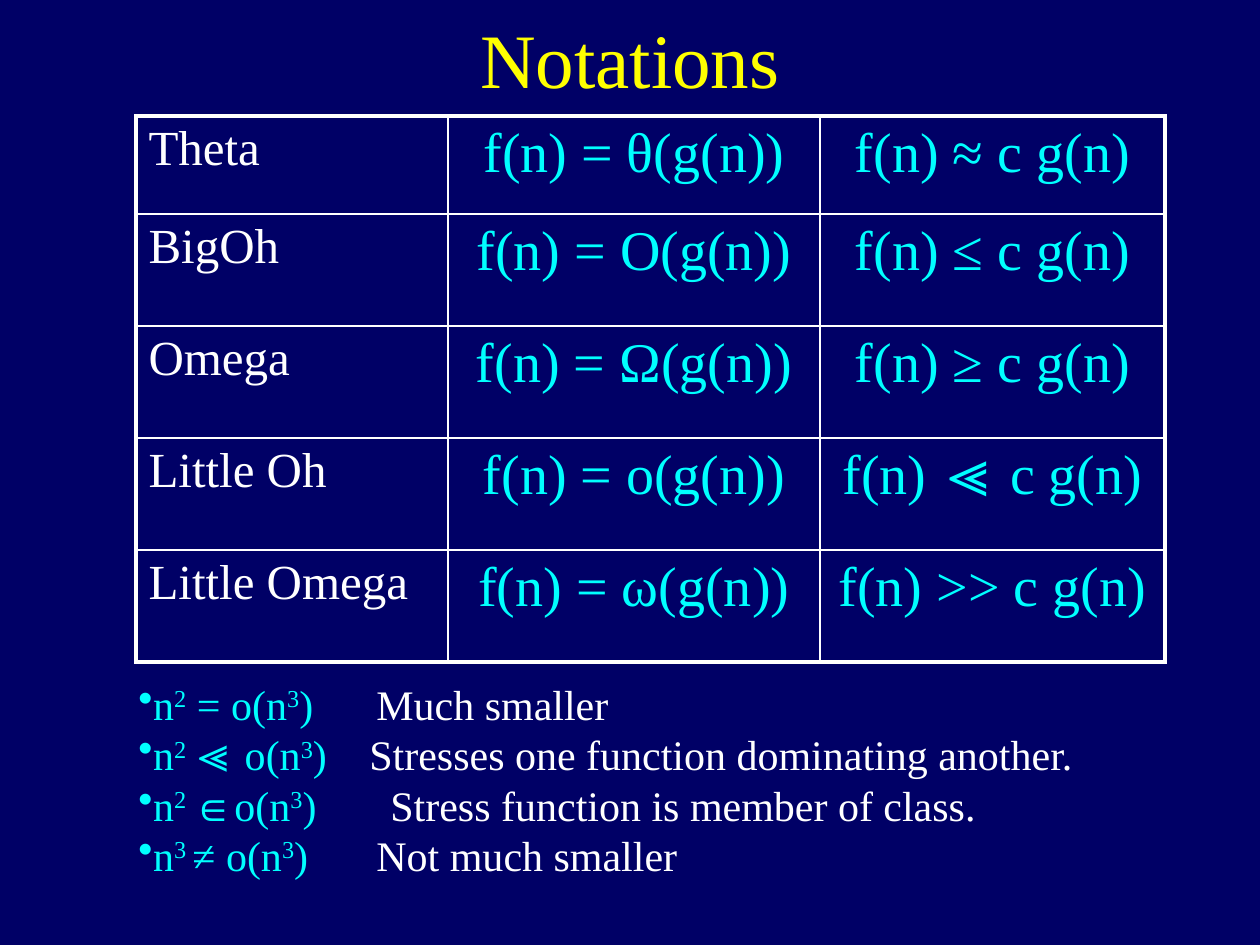
import dataclasses

import lxml.etree
import pptx
import pptx.dml.color
import pptx.enum.text
import pptx.oxml.ns
import pptx.util

PX = 914400 / 126
ALIGN = pptx.enum.text.PP_ALIGN
ANCHOR = pptx.enum.text.MSO_ANCHOR


@dataclasses.dataclass(frozen=True)
class Theme:
    background: str = "000066"
    heading: str = "FFFF00"
    formula: str = "00FFFF"
    body: str = "FFFFFF"
    font: str = "Times New Roman"
    symbol_font: str = "Arial"
    title_size: int = 44
    formula_size: int = 32
    label_size: int = 28
    example_size: int = 24
    outer_line: float = 2.25
    inner_line: float = 1


def px(length):
    return pptx.util.Emu(round(length * PX))


def rgb(value):
    return pptx.dml.color.RGBColor.from_string(value)


def add_xml(parent, tag, **attributes):
    element = lxml.etree.SubElement(parent, pptx.oxml.ns.qn(tag))
    for key, value in attributes.items():
        element.set(key, str(value))
    return element


class SlideBuilder:
    def __init__(self, slide, theme):
        self.slide = slide
        self.theme = theme
        fill = slide.background.fill
        fill.solid()
        fill.fore_color.rgb = rgb(theme.background)

    def run(self, paragraph, text, size, color, font=None, raised=False):
        run = paragraph.add_run()
        run.text = text
        run.font.size = pptx.util.Pt(size)
        run.font.name = font or self.theme.font
        run.font.color.rgb = rgb(color)
        if raised:
            run._r.get_or_add_rPr().set("baseline", "30000")

    def space_before(self, paragraph, percent):
        spacing = add_xml(paragraph._p.get_or_add_pPr(), "a:spcBef")
        add_xml(spacing, "a:spcPct", val=percent * 1000)

    def title(self, text, left, top, width, height):
        heading = self.slide.shapes.title
        heading.left, heading.top = px(left), px(top)
        heading.width, heading.height = px(width), px(height)
        heading.text_frame.vertical_anchor = ANCHOR.MIDDLE
        paragraph = heading.text_frame.paragraphs[0]
        paragraph.alignment = ALIGN.CENTER
        self.run(paragraph, text, self.theme.title_size, self.theme.heading)

    def borders(self, cell, outer_sides):
        properties = cell._tc.get_or_add_tcPr()
        for index, side in enumerate("LRTB"):
            outer = side in outer_sides
            points = self.theme.outer_line if outer else self.theme.inner_line
            line = add_xml(properties, f"a:ln{side}", w=pptx.util.Pt(points))
            add_xml(add_xml(line, "a:solidFill"), "a:srgbClr", val=self.theme.body)
            properties.remove(line)
            properties.insert(index, line)

    def table(self, rows, left, top, widths, heights):
        frame = self.slide.shapes.add_table(
            len(rows), len(widths), px(left), px(top), px(sum(widths)), px(sum(heights)))
        table = frame.table
        table.first_row = table.horz_banding = False
        for column, width in zip(table.columns, widths):
            column.width = px(width)
        for row, height in zip(table.rows, heights):
            row.height = px(height)
        last_row, last_column = len(rows) - 1, len(widths) - 1
        for r, row in enumerate(rows):
            for c, text in enumerate(row):
                cell = table.cell(r, c)
                cell.fill.background()
                paragraph = cell.text_frame.paragraphs[0]
                if c == 0:
                    self.space_before(paragraph, 20)
                    self.run(paragraph, text, self.theme.label_size, self.theme.body)
                else:
                    paragraph.alignment = ALIGN.CENTER
                    self.run(paragraph, text, self.theme.formula_size, self.theme.formula)
                edges = {"L": c == 0, "R": c == last_column, "T": r == 0, "B": r == last_row}
                self.borders(cell, [side for side, outer in edges.items() if outer])

    def bullets(self, examples, left, top, width, height):
        box = self.slide.shapes.add_textbox(px(left), px(top), px(width), px(height))
        frame = box.text_frame
        frame.word_wrap = True
        size = self.theme.example_size
        for index, (formula, remark, remark_tab) in enumerate(examples):
            paragraph = frame.paragraphs[0] if index == 0 else frame.add_paragraph()
            properties = paragraph._p.get_or_add_pPr()
            properties.set("marL", "0")
            properties.set("indent", str(-px(47)))
            self.space_before(paragraph, 20 if index == 0 else 0)
            add_xml(properties, "a:buChar", char="•")
            tabs = add_xml(properties, "a:tabLst")
            add_xml(tabs, "a:tab", pos=px(remark_tab), algn="l")
            # Odd parts of the formula are exponents
            for part, text in enumerate(formula.split("^")):
                raised = part % 2 == 1
                if text.startswith("∈"):
                    self.run(paragraph, "∈", size, self.theme.formula, self.theme.symbol_font)
                    text = text[1:]
                self.run(paragraph, text, size, self.theme.formula, raised=raised)
            self.run(paragraph, "\t" + remark, size, self.theme.body)


def main():
    deck = pptx.Presentation()
    deck.slide_width, deck.slide_height = px(1260), px(945)
    page = SlideBuilder(deck.slides.add_slide(deck.slide_layouts[5]), Theme())

    # Heading
    page.title("Notations", 94, -21, 1072, 158)

    # Notation, definition and meaning
    notations = [
        ("Theta", "θ", "≈"),
        ("BigOh", "O", "≤"),
        ("Omega", "Ω", "≥"),
        ("Little Oh", "o", "≪"),
        ("Little Omega", "ω", ">>"),
    ]
    rows = [(name, f"f(n) = {symbol}(g(n))", f"f(n) {relation} c g(n)")
            for name, symbol, relation in notations]
    page.table(rows, 136, 116, [312, 372, 345], [98] + [112] * 4)

    # Examples, with the tab position of each remark
    examples = [
        ("n^2^ = o(n^3^)", "Much smaller", 238),
        ("n^2 ^≪ o(n^3^)", "Stresses one function dominating another.", 231),
        ("n^2 ^∈o(n^3^)", "Stress function is member of class.", 252),
        ("n^3 ^≠ o(n^3^)", "Not much smaller", 238),
    ]
    page.bullets(examples, 126, 672, 1081, 294)

    deck.save("out.pptx")


if __name__ == "__main__":
    main()
